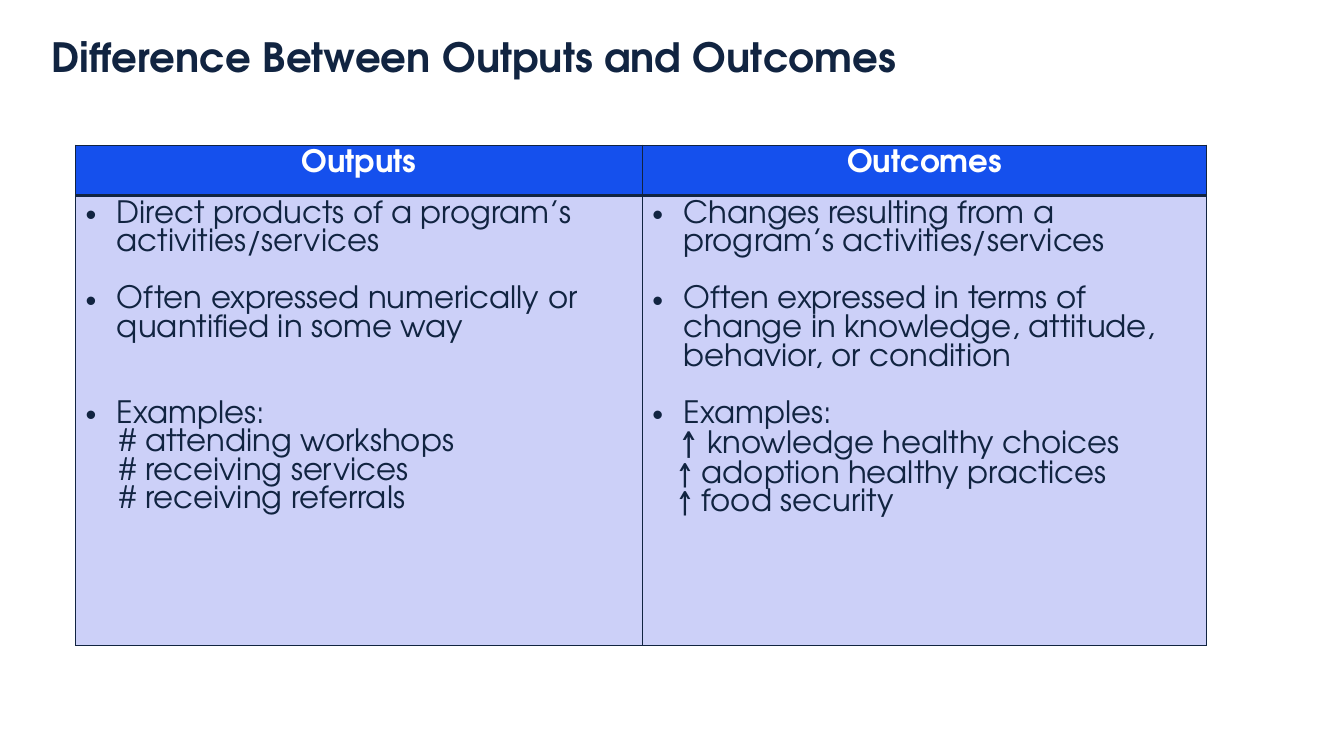
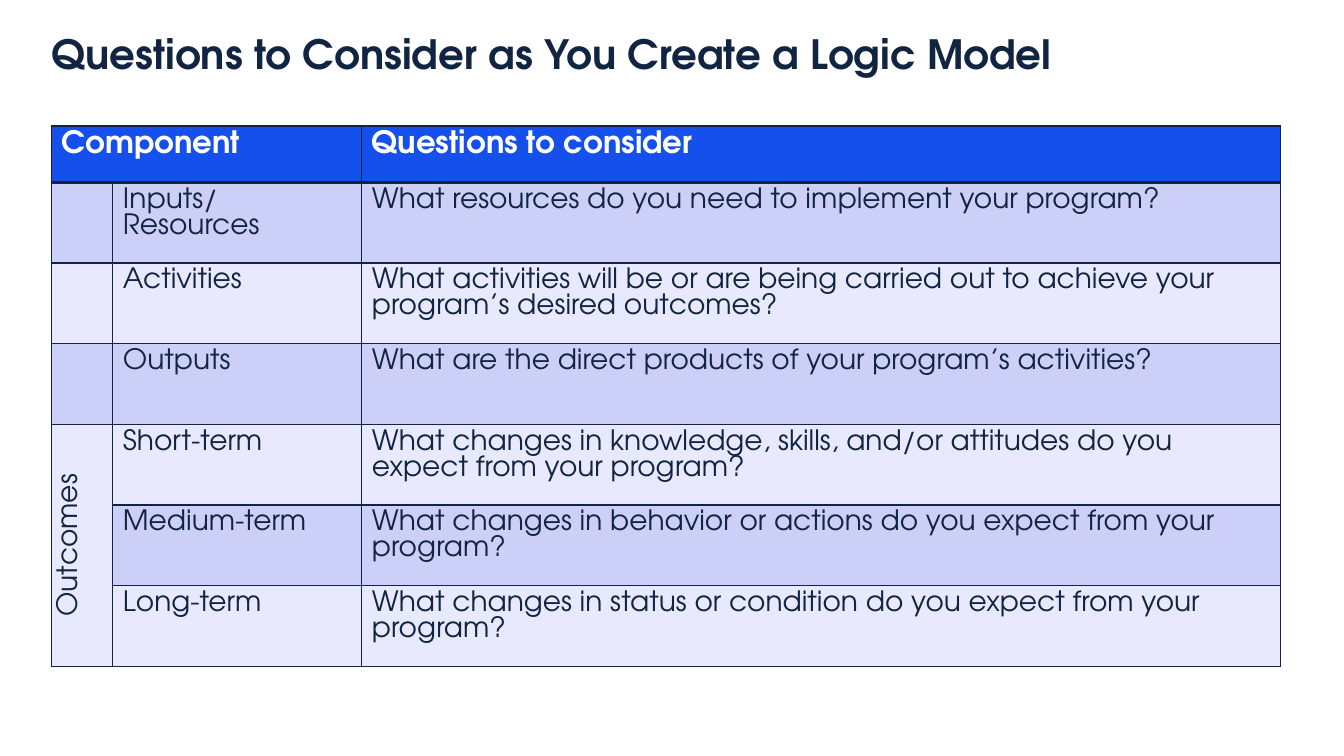
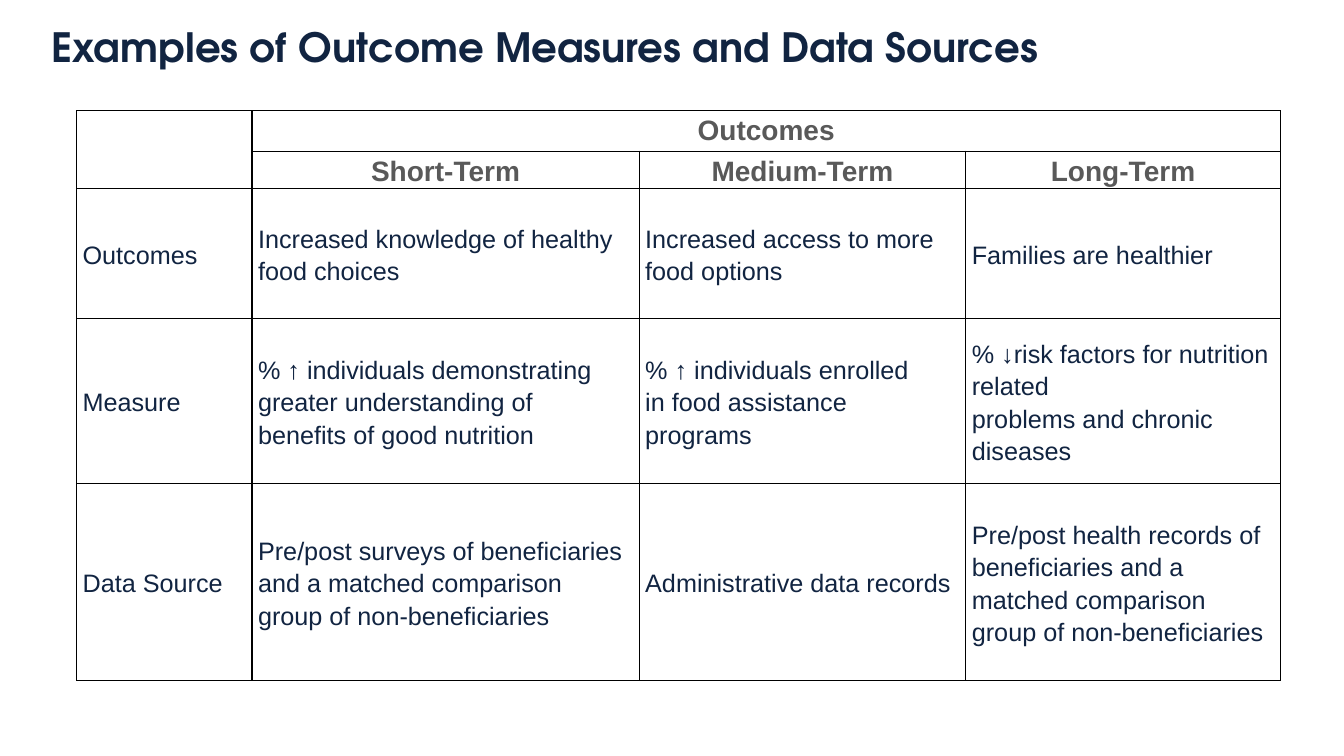
from dataclasses import dataclass

from lxml import etree
from pptx import Presentation
from pptx.dml.color import RGBColor
from pptx.enum.text import MSO_ANCHOR, MSO_AUTO_SIZE, PP_ALIGN
from pptx.oxml.ns import qn
from pptx.util import Inches, Pt

NAVY = RGBColor(0x11, 0x24, 0x41)
BLUE = RGBColor(0x15, 0x50, 0xED)
LAVENDER = RGBColor(0xCC, 0xD0, 0xF8)
PALE_LAVENDER = RGBColor(0xE8, 0xE9, 0xFC)
GRAY = RGBColor(0x59, 0x59, 0x59)
WHITE = RGBColor(0xFF, 0xFF, 0xFF)
BLACK = RGBColor(0x00, 0x00, 0x00)

ADVENTOR = "TeX Gyre Adventor"
ARIAL = "Arial"
LEFT, CENTER = PP_ALIGN.LEFT, PP_ALIGN.CENTER
TOP, MIDDLE, BOTTOM = MSO_ANCHOR.TOP, MSO_ANCHOR.MIDDLE, MSO_ANCHOR.BOTTOM
NO_AUTOFIT = MSO_AUTO_SIZE.NONE

TITLE_ONLY_LAYOUT = 5
THIN, THICK = 1, 3
LINE_GAP = 20.4  # height of one text line at 22 pt


@dataclass(frozen=True)
class ListLine:
    text: str
    bullet: bool = False
    indent: float = 0
    gap: float = 0
    lead: str = ""


@dataclass(frozen=True)
class TableLayout:
    left: float
    top: float
    columns: list[float]
    rows: list[float]


@dataclass(frozen=True)
class CellStyle:
    size: float
    color: RGBColor
    fill: RGBColor | None = None
    font: str = ADVENTOR
    bold: bool = False
    align: PP_ALIGN = LEFT
    anchor: MSO_ANCHOR = TOP
    line_spacing: float | None = None


HEADER = CellStyle(22, WHITE, BLUE, bold=True)
CENTERED_HEADER = CellStyle(22, WHITE, BLUE, bold=True, align=CENTER)
LIST_BODY = CellStyle(22, NAVY, LAVENDER)
BANDS = [CellStyle(20, NAVY, LAVENDER), CellStyle(20, NAVY, PALE_LAVENDER)]
VERTICAL_LABEL = CellStyle(20, NAVY, PALE_LAVENDER, align=CENTER)
MEASURE_HEADER = CellStyle(20, GRAY, font=ARIAL, bold=True, align=CENTER, line_spacing=1.15)
MEASURE_BODY = CellStyle(18, NAVY, font=ARIAL, anchor=MIDDLE, line_spacing=1.15)

# Contents
OUTPUT_LINES = [
    ListLine("Direct products of a program’s activities/services", bullet=True),
    ListLine("Often expressed numerically or quantified in some way", bullet=True, gap=LINE_GAP),
    ListLine("Examples:", bullet=True, gap=2 * LINE_GAP),
    ListLine("# attending workshops", indent=0.34),
    ListLine("# receiving services", indent=0.34),
    ListLine("# receiving referrals", indent=0.34),
]
OUTCOME_LINES = [
    ListLine("Changes resulting from a program’s activities/services", bullet=True),
    ListLine("Often expressed in terms of change in knowledge, attitude, behavior, or condition",
             bullet=True, gap=LINE_GAP),
    ListLine("Examples:", bullet=True, gap=LINE_GAP),
    ListLine("knowledge healthy choices", indent=0.28, lead="↑ "),
    ListLine("↑ adoption healthy practices", indent=0.25),
    ListLine("↑ food security", indent=0.25),
]
QUESTIONS = [
    ("Inputs/ Resources", "What resources do you need to implement your program?"),
    ("Activities", "What activities will be or are being carried out to achieve "
                   "your program’s desired outcomes?"),
    ("Outputs", "What are the direct products of your program’s activities?"),
    ("Short-term", "What changes in knowledge, skills, and/or attitudes do you "
                   "expect from your program?"),
    ("Medium-term", "What changes in behavior or actions do you expect from your program?"),
    ("Long-term", "What changes in status or condition do you expect from your program?"),
]
TERMS = ["Short-Term", "Medium-Term", "Long-Term"]
MEASURES = [
    ("Outcomes", "Increased knowledge of healthy food choices",
     "Increased access to more food options", "Families are healthier"),
    ("Measure",
     "% ↑ individuals demonstrating greater understanding of\nbenefits of good nutrition",
     "% ↑ individuals enrolled\nin food assistance programs",
     "% ↓risk factors for nutrition related\nproblems and chronic diseases"),
    ("Data Source",
     "Pre/post surveys of beneficiaries and a matched comparison group of non-beneficiaries",
     "Administrative data records",
     "Pre/post health records of beneficiaries and a matched comparison group of "
     "non-beneficiaries"),
]


def add_text(text_frame, text: str, *, size: float, color: RGBColor, font: str = ADVENTOR,
             bold: bool = False, align: PP_ALIGN = LEFT, line_spacing: float | None = None,
             bullet: bool = False, indent: float = 0, gap: float = 0, lead: str = "") -> None:
    """Write one paragraph, filling the empty first one if there is one."""
    paragraph = text_frame.paragraphs[-1]
    if paragraph.runs:
        paragraph = text_frame.add_paragraph()
    properties = paragraph._p.get_or_add_pPr()
    if bullet:
        properties.set("marL", str(Inches(0.31)))
        properties.set("indent", str(-Inches(0.31)))
        etree.SubElement(properties, qn("a:buFont"), typeface=ARIAL)
        etree.SubElement(properties, qn("a:buChar"), char="•")
    elif indent:
        properties.set("marL", str(Inches(indent)))
        properties.set("indent", "0")
    paragraph.alignment = align
    if line_spacing:
        paragraph.line_spacing = line_spacing
    if gap:
        paragraph.space_before = Pt(gap)
    for part, part_size in ((lead, 24), (text, size)):
        if part:
            run = paragraph.add_run()
            run.text = part
            run.font.name = font
            run.font.size = Pt(part_size)
            run.font.bold = bold
            run.font.color.rgb = color


def add_titled_slide(presentation, title: str, top: float, width: float):
    slide = presentation.slides.add_slide(presentation.slide_layouts[TITLE_ONLY_LAYOUT])
    shape = slide.shapes.title
    shape.left, shape.top = Inches(0.51), Inches(top)
    shape.width, shape.height = Inches(width), Inches(0.46)
    frame = shape.text_frame
    frame.margin_left = frame.margin_top = frame.margin_right = frame.margin_bottom = 0
    frame.vertical_anchor = BOTTOM
    frame.word_wrap = True
    frame.auto_size = NO_AUTOFIT
    add_text(frame, title, size=28.8, color=NAVY, bold=True, line_spacing=0.9)
    return slide


def add_plain_table(slide, layout: TableLayout):
    frame = slide.shapes.add_table(
        len(layout.rows), len(layout.columns), Inches(layout.left), Inches(layout.top),
        Inches(sum(layout.columns)), Inches(sum(layout.rows)))
    table = frame.table
    table.first_row = table.horz_banding = False
    for column, width in zip(table.columns, layout.columns):
        column.width = Inches(width)
    for row, height in zip(table.rows, layout.rows):
        row.height = Inches(height)
    return table


def set_borders(table, color: RGBColor, header_rule: float = THIN) -> None:
    """Frame every cell, with a rule of its own width under the first row."""
    for row_index, row in enumerate(table.rows):
        widths = {
            "L": THIN, "R": THIN,
            "T": header_rule if row_index == 1 else THIN,
            "B": header_rule if row_index == 0 else THIN,
        }
        for cell in row.cells:
            properties = cell._tc.get_or_add_tcPr()
            for side, width in widths.items():
                line = etree.SubElement(properties, qn(f"a:ln{side}"), w=str(Pt(width)))
                fill = etree.SubElement(line, qn("a:solidFill"))
                etree.SubElement(fill, qn("a:srgbClr"), val=str(color))


def fill_cell(cell, content: str | list[ListLine], style: CellStyle) -> None:
    if style.fill is None:
        cell.fill.background()
    else:
        cell.fill.solid()
        cell.fill.fore_color.rgb = style.fill
    cell.vertical_anchor = style.anchor
    lines = content
    if isinstance(content, str):
        lines = [ListLine(text) for text in content.split("\n") if text]
    for line in lines:
        add_text(cell.text_frame, line.text, size=style.size, color=style.color,
                 font=style.font, bold=style.bold, align=style.align,
                 line_spacing=style.line_spacing, bullet=line.bullet,
                 indent=line.indent, gap=line.gap, lead=line.lead)


def build_difference_slide(presentation) -> None:
    slide = add_titled_slide(presentation, "Difference Between Outputs and Outcomes", 0.35, 9.37)
    table = add_plain_table(slide, TableLayout(0.75, 1.44, [5.62, 5.6], [0.5, 4.46]))
    set_borders(table, NAVY, THICK)
    columns = [("Outputs", OUTPUT_LINES), ("Outcomes", OUTCOME_LINES)]
    for index, (heading, lines) in enumerate(columns):
        fill_cell(table.cell(0, index), heading, CENTERED_HEADER)
        fill_cell(table.cell(1, index), lines, LIST_BODY)


def build_questions_slide(presentation) -> None:
    slide = add_titled_slide(
        presentation, "Questions to Consider as You Create a Logic Model", 0.32, 10.19)
    table = add_plain_table(
        slide, TableLayout(0.51, 1.25, [0.61, 2.47, 9.11], [0.56] + [0.8] * len(QUESTIONS)))
    set_borders(table, NAVY, THICK)
    table.cell(0, 0).merge(table.cell(0, 1))
    table.cell(4, 0).merge(table.cell(6, 0))
    fill_cell(table.cell(0, 0), "Component", HEADER)
    fill_cell(table.cell(0, 2), "Questions to consider", HEADER)
    for index, (component, question) in enumerate(QUESTIONS):
        band = BANDS[index % 2]
        for column, text in enumerate(("", component, question)):
            fill_cell(table.cell(index + 1, column), text, band)
    # Sideways label of the three outcome rows
    label = table.cell(4, 0)
    label._tc.get_or_add_tcPr().set("vert", "vert270")
    fill_cell(label, "Outcomes", VERTICAL_LABEL)


def build_measures_slide(presentation) -> None:
    slide = add_titled_slide(
        presentation, "Examples of Outcome Measures and Data Sources", 0.25, 10.21)
    table = add_plain_table(
        slide, TableLayout(0.76, 1.1, [1.74, 3.84, 3.24, 3.12], [0.4, 0.37, 1.29, 1.64, 1.95]))
    set_borders(table, BLACK)
    for cell in table.iter_cells():
        cell.margin_left = cell.margin_right = Inches(0.06)
        cell.margin_top = cell.margin_bottom = 0
    table.cell(0, 0).merge(table.cell(1, 0))
    table.cell(0, 1).merge(table.cell(0, 3))
    header_rows = [("", "Outcomes", "", ""), ("", *TERMS)]
    for row, texts in enumerate(header_rows + MEASURES):
        style = MEASURE_HEADER if row < len(header_rows) else MEASURE_BODY
        for column, text in enumerate(texts):
            fill_cell(table.cell(row, column), text, style)


def main() -> None:
    presentation = Presentation()
    presentation.slide_width, presentation.slide_height = Inches(13.33), Inches(7.5)
    build_difference_slide(presentation)
    build_questions_slide(presentation)
    build_measures_slide(presentation)
    presentation.save("out.pptx")


if __name__ == "__main__":
    main()
